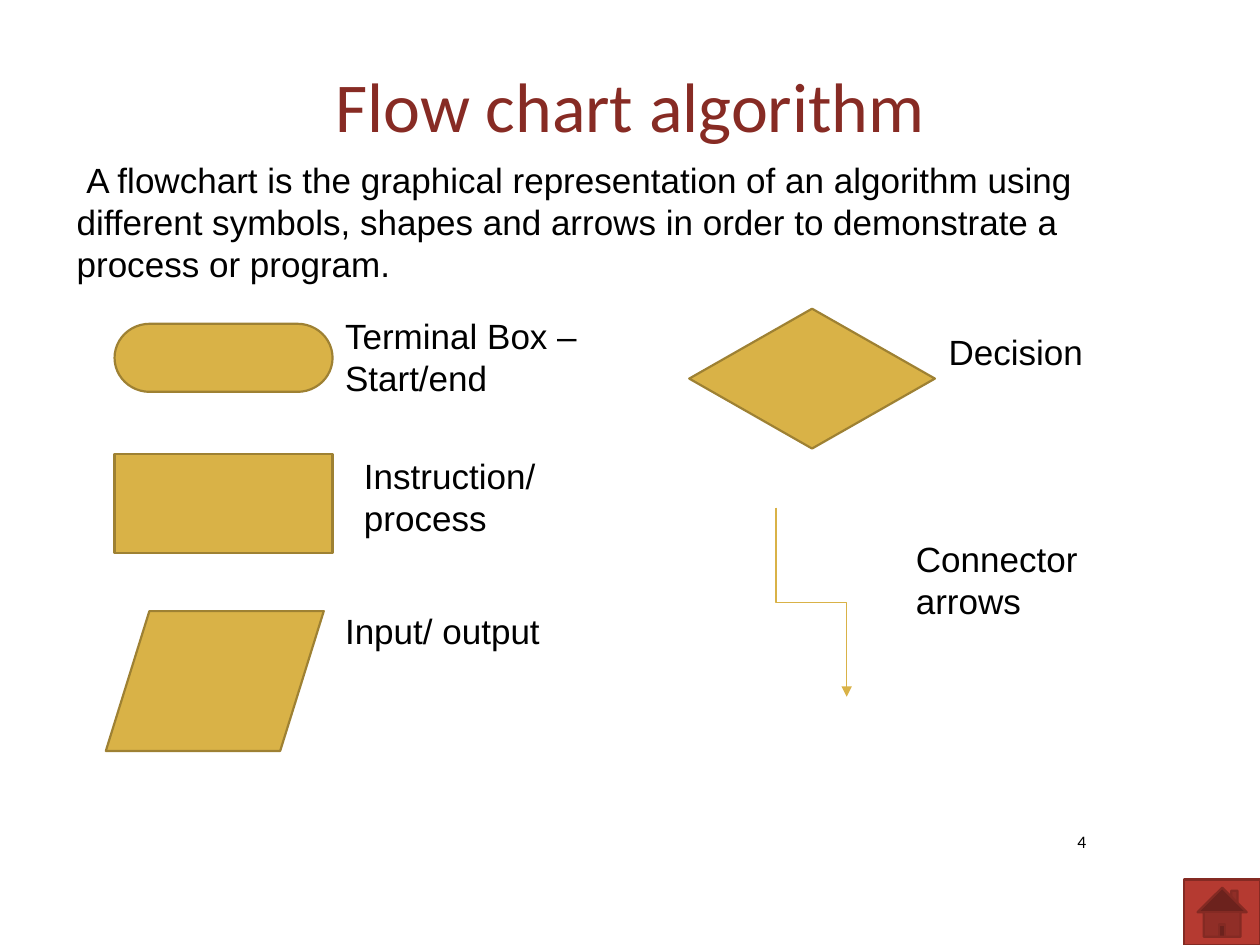
from lxml import etree
from pptx import Presentation
from pptx.dml.color import RGBColor
from pptx.enum.shapes import MSO_CONNECTOR, MSO_SHAPE
from pptx.enum.text import MSO_ANCHOR, MSO_AUTO_SIZE, PP_ALIGN
from pptx.oxml.ns import qn
from pptx.util import Inches, Pt

ELBOW = MSO_CONNECTOR.ELBOW
HOME = MSO_SHAPE.ACTION_BUTTON_HOME
MIDDLE, TOP = MSO_ANCHOR.MIDDLE, MSO_ANCHOR.TOP
LEFT, CENTER, RIGHT = PP_ALIGN.LEFT, PP_ALIGN.CENTER, PP_ALIGN.RIGHT
GROW, FIXED = MSO_AUTO_SIZE.SHAPE_TO_FIT_TEXT, MSO_AUTO_SIZE.NONE

THEME = {
    "title": ("Calibri", 40, "872B24"),
    "body": ("Arial", 20, "000000"),
    "number": ("Calibri", 10, "000000"),
    "symbol": ("D9B247", "9E8133"),
    "home": ("B53A31", "842A23"),
    "arrow": "D9B247",
    "outline": 1.25,
    "arrow_width": 0.75,
}

TITLE = "Flow chart algorithm"
DEFINITION = [
    (" ", True),
    ("A flowchart is the graphical representation of an algorithm using "
     "different symbols, shapes and arrows in order to demonstrate a "
     "process or program.", False),
]
SYMBOLS = [
    (MSO_SHAPE.FLOWCHART_TERMINATOR, (0.91, 2.57, 1.73, 0.54)),
    (MSO_SHAPE.FLOWCHART_PROCESS, (0.91, 3.6, 1.73, 0.79)),
    (MSO_SHAPE.FLOWCHART_DATA, (0.84, 4.85, 1.73, 1.11)),
    (MSO_SHAPE.FLOWCHART_DECISION, (5.47, 2.45, 1.95, 1.11)),
]
LABEL_WIDTH = 2.09
LABELS = [
    ("Terminal Box – Start/end", 2.64, 2.45, 0.77),
    ("Instruction/ process", 2.79, 3.56, 0.77),
    ("Input/ output", 2.64, 4.79, 0.44),
    ("Decision", 7.43, 2.57, 0.44),
    ("Connector arrows", 7.17, 4.22, 0.77),
]
ARROW_START, ARROW_END = (6.16, 4.03), (6.72, 5.53)


def inches(values):
    return [Inches(v) for v in values]


def write(s, runs, style, align=LEFT, anchor=TOP, auto_size=GROW):
    font, size, colour = THEME[style]
    tf = s.text_frame
    tf.word_wrap = True
    tf.auto_size = auto_size
    tf.vertical_anchor = anchor
    p = tf.paragraphs[0]
    p.alignment = align
    for text, bold in runs:
        r = p.add_run()
        r.text = text
        r.font.name = font
        r.font.size = Pt(size)
        r.font.bold = bold
        r.font.color.rgb = RGBColor.from_string(colour)


def add_text(slide, box, runs, style, **layout):
    write(slide.shapes.add_textbox(*inches(box)), runs, style, **layout)


def add_symbol(slide, kind, box, style):
    fill, line = THEME[style]
    s = slide.shapes.add_shape(kind, *inches(box))
    s.shadow.inherit = False
    s.fill.solid()
    s.fill.fore_color.rgb = RGBColor.from_string(fill)
    s.line.color.rgb = RGBColor.from_string(line)
    s.line.width = Pt(THEME["outline"])


def add_down_elbow(slide, start, end):
    center_x, center_y = ((a + b) / 2 for a, b in zip(start, end))
    half_run, half_drop = (end[0] - start[0]) / 2, (end[1] - start[1]) / 2
    s = slide.shapes.add_connector(ELBOW, *inches((
        center_x + half_drop, center_y - half_run,
        center_x - half_drop, center_y + half_run)))
    s.line.color.rgb = RGBColor.from_string(THEME["arrow"])
    s.line.width = Pt(THEME["arrow_width"])
    sp_pr = s._element.spPr
    sp_pr.find(qn("a:xfrm")).set("rot", str(270 * 60000))
    etree.SubElement(sp_pr.find(qn("a:ln")), qn("a:tailEnd"), type="triangle")
    etree.SubElement(sp_pr, qn("a:effectLst"))


def main():
    prs = Presentation()
    prs.slide_width, prs.slide_height = Inches(10), Inches(7.5)
    slide = prs.slides.add_slide(prs.slide_layouts[5])

    title = slide.shapes.title
    title.left, title.top, title.width, title.height = inches((1.28, 0.43, 7.44, 0.8))
    write(title, [(TITLE, False)], "title", CENTER, MIDDLE, FIXED)

    add_text(slide, (8.29, 6.52, 0.43, 0.31), [("4", False)], "number",
             align=RIGHT, anchor=MIDDLE, auto_size=FIXED)
    add_symbol(slide, HOME, (9.4, 6.98, 0.6, 0.52), "home")
    add_text(slide, (0.51, 1.21, 8.89, 1.11), DEFINITION, "body")

    for kind, box in SYMBOLS:
        add_symbol(slide, kind, box, "symbol")
    add_down_elbow(slide, ARROW_START, ARROW_END)
    for text, left, top, height in LABELS:
        add_text(slide, (left, top, LABEL_WIDTH, height), [(text, False)], "body")

    prs.save("out.pptx")


if __name__ == "__main__":
    main()
